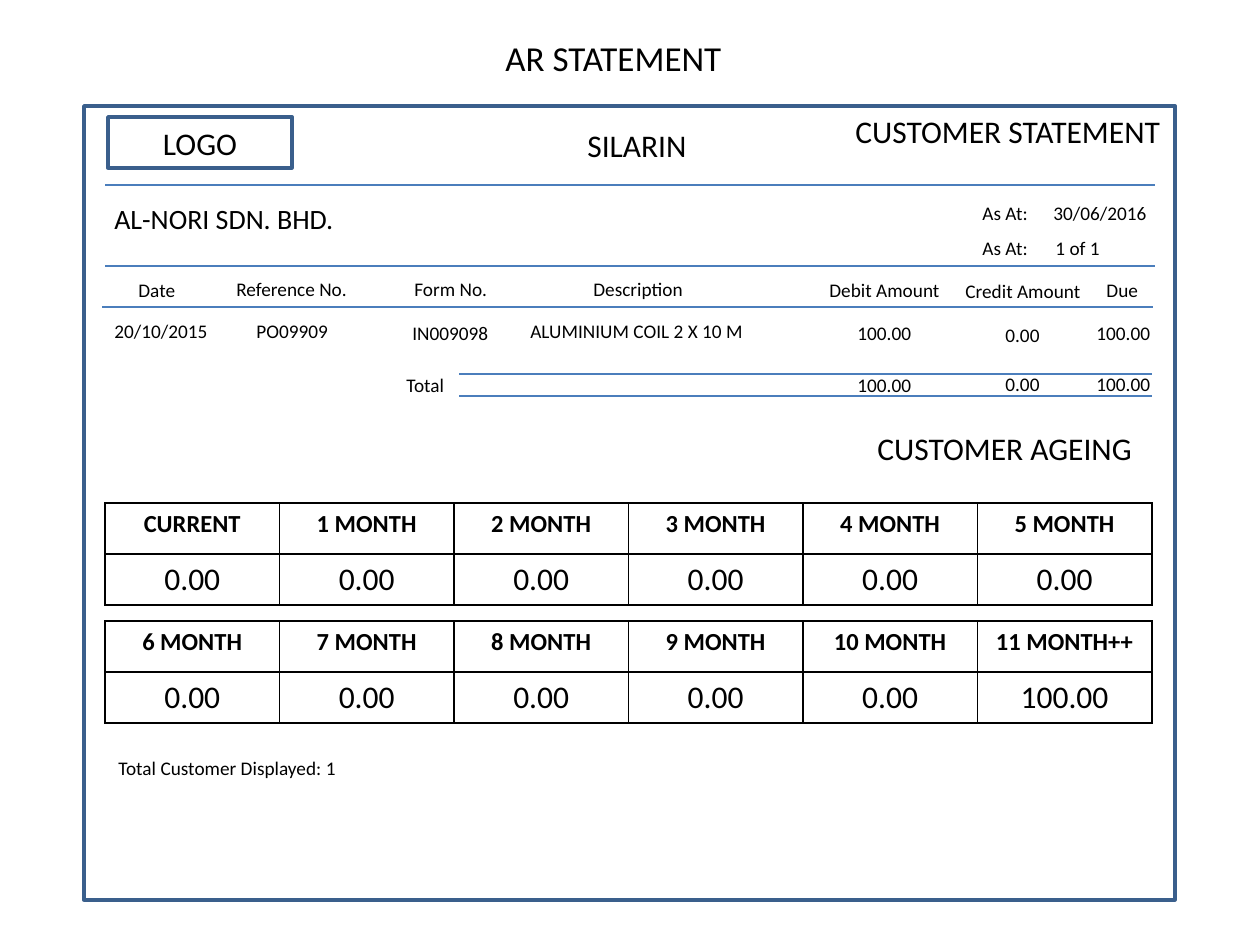
from lxml import etree
from pptx import Presentation
from pptx.dml.color import RGBColor
from pptx.enum.shapes import MSO_CONNECTOR, MSO_SHAPE
from pptx.enum.text import MSO_ANCHOR, MSO_AUTO_SIZE, PP_ALIGN
from pptx.oxml.ns import qn
from pptx.util import Emu, Pt

RECTANGLE = MSO_SHAPE.RECTANGLE
STRAIGHT = MSO_CONNECTOR.STRAIGHT
CENTER = PP_ALIGN.CENTER
MIDDLE = MSO_ANCHOR.MIDDLE
GROW = MSO_AUTO_SIZE.SHAPE_TO_FIT_TEXT
PX_PER_INCH = 126
FONT = "Calibri"
BLACK = "000000"
FRAME_BLUE = "3A5F8C"
RULE_BLUE = "4B7EBC"
BOX_HEIGHTS = {11: 36, 16: 47, 18: 50, 20: 55}

LABELS = [
    ("AR STATEMENT", 493, 30, 243, 20),
    ("SILARIN", 575, 120, 129, 18),
    ("CUSTOMER STATEMENT", 843, 106, 333, 18),
    ("AL-NORI SDN. BHD.", 102, 195, 253, 16),
    ("As At:", 970, 195, 72, 11),
    ("30/06/2016", 1041, 195, 120, 11),
    ("As At:", 970, 230, 72, 11),
    ("1 of 1", 1043, 230, 71, 11),
    ("Date", 126, 272, 63, 11),
    ("Reference No.", 224, 271, 139, 11),
    ("Form No.", 402, 271, 98, 11),
    ("Description", 581, 271, 116, 11),
    ("Debit Amount", 817, 272, 136, 11),
    ("Credit Amount", 953, 273, 141, 11),
    ("Due", 1094, 272, 57, 11),
    ("20/10/2015", 102, 313, 120, 11),
    ("PO09909", 244, 313, 98, 11),
    ("IN009098", 400, 315, 102, 11),
    ("ALUMINIUM COIL 2 X 10 M", 518, 313, 239, 11),
    ("Total", 394, 367, 66, 11),
    ("CUSTOMER AGEING", 865, 423, 282, 18),
    ("Total Customer Displayed: 1", 106, 750, 247, 11),
]
AMOUNTS = [("100.00", 845, 79), ("0.00", 993, 60), ("100.00", 1084, 79)]
AMOUNT_ROWS = [(315, 317, 315), (367, 366, 366)]
RULES = [(105, 1155, 185), (105, 1155, 266), (102, 1153, 307),
         (459, 1152, 374), (459, 1152, 396)]
AGEING = [
    (503, ["CURRENT", "1 MONTH", "2 MONTH", "3 MONTH", "4 MONTH", "5 MONTH"],
     ["0.00"] * 6),
    (621, ["6 MONTH", "7 MONTH", "8 MONTH", "9 MONTH", "10 MONTH", "11 MONTH++"],
     ["0.00"] * 5 + ["100.00"]),
]


def px(length):
    """Turn pixels into EMU."""
    return Emu(round(length * 914400 / PX_PER_INCH))


def color(value):
    """Turn a hex string into a colour."""
    return RGBColor.from_string(value)


def add_text(paragraph, text, size, bold=False):
    """Add one run of black text."""
    run = paragraph.add_run()
    run.text = text
    run.font.name = FONT
    run.font.size = Pt(size)
    run.font.bold = bold
    run.font.color.rgb = color(BLACK)


def add_label(slide, text, left, top, width, size):
    """Add a one-line text box."""
    box = slide.shapes.add_textbox(px(left), px(top), px(width), px(BOX_HEIGHTS[size]))
    box.text_frame.word_wrap = False
    box.text_frame.auto_size = GROW
    add_text(box.text_frame.paragraphs[0], text, size)


def add_frame(slide, left, top, width, height):
    """Add an unfilled rectangle with a blue outline."""
    shape = slide.shapes.add_shape(RECTANGLE, px(left), px(top), px(width), px(height))
    shape.shadow.inherit = False
    shape.fill.background()
    shape.line.color.rgb = color(FRAME_BLUE)
    shape.line.width = Pt(2)
    return shape


def add_logo_box(slide):
    """Add the framed placeholder word for the logo."""
    frame = add_frame(slide, 108, 117, 184, 51).text_frame
    frame.vertical_anchor = MIDDLE
    frame.paragraphs[0].alignment = CENTER
    add_text(frame.paragraphs[0], "LOGO", 18)


def add_rule(slide, left, right, y):
    """Add a thin horizontal line."""
    rule = slide.shapes.add_connector(STRAIGHT, px(right), px(y), px(left), px(y))
    rule.line.color.rgb = color(RULE_BLUE)
    rule.line.width = Pt(0.75)
    etree.SubElement(rule.element.spPr, qn("a:effectLst"))


def add_borders(cell):
    """Draw a black line on each side of a cell."""
    properties = cell._tc.get_or_add_tcPr()
    for side in ("lnL", "lnR", "lnT", "lnB"):
        line = etree.SubElement(properties, qn(f"a:{side}"), w=str(Pt(1)))
        fill = etree.SubElement(line, qn("a:solidFill"))
        etree.SubElement(fill, qn("a:srgbClr"), val=BLACK)


def add_ageing_table(slide, top, headings, amounts):
    """Add a table with bold headings above their amounts."""
    table = slide.shapes.add_table(
        2, len(headings), px(105), px(top), px(1047), px(102)).table
    for row, (texts, size, bold) in enumerate(
            [(headings, 14, True), (amounts, 18, False)]):
        for column, text in enumerate(texts):
            cell = table.cell(row, column)
            add_borders(cell)
            cell.fill.background()
            paragraph = cell.text_frame.paragraphs[0]
            paragraph.alignment = CENTER
            add_text(paragraph, text, size, bold)


def main():
    """Build and save the statement slide."""
    presentation = Presentation()
    presentation.slide_width = px(1260)
    presentation.slide_height = px(945)
    slide = presentation.slides.add_slide(presentation.slide_layouts[6])
    add_frame(slide, 84, 106, 1091, 794)
    add_logo_box(slide)
    for rule in RULES:
        add_rule(slide, *rule)
    for label in LABELS:
        add_label(slide, *label)
    for tops in AMOUNT_ROWS:
        for (text, left, width), top in zip(AMOUNTS, tops):
            add_label(slide, text, left, top, width, 11)
    for block in AGEING:
        add_ageing_table(slide, *block)
    presentation.save("out.pptx")


if __name__ == "__main__":
    main()
